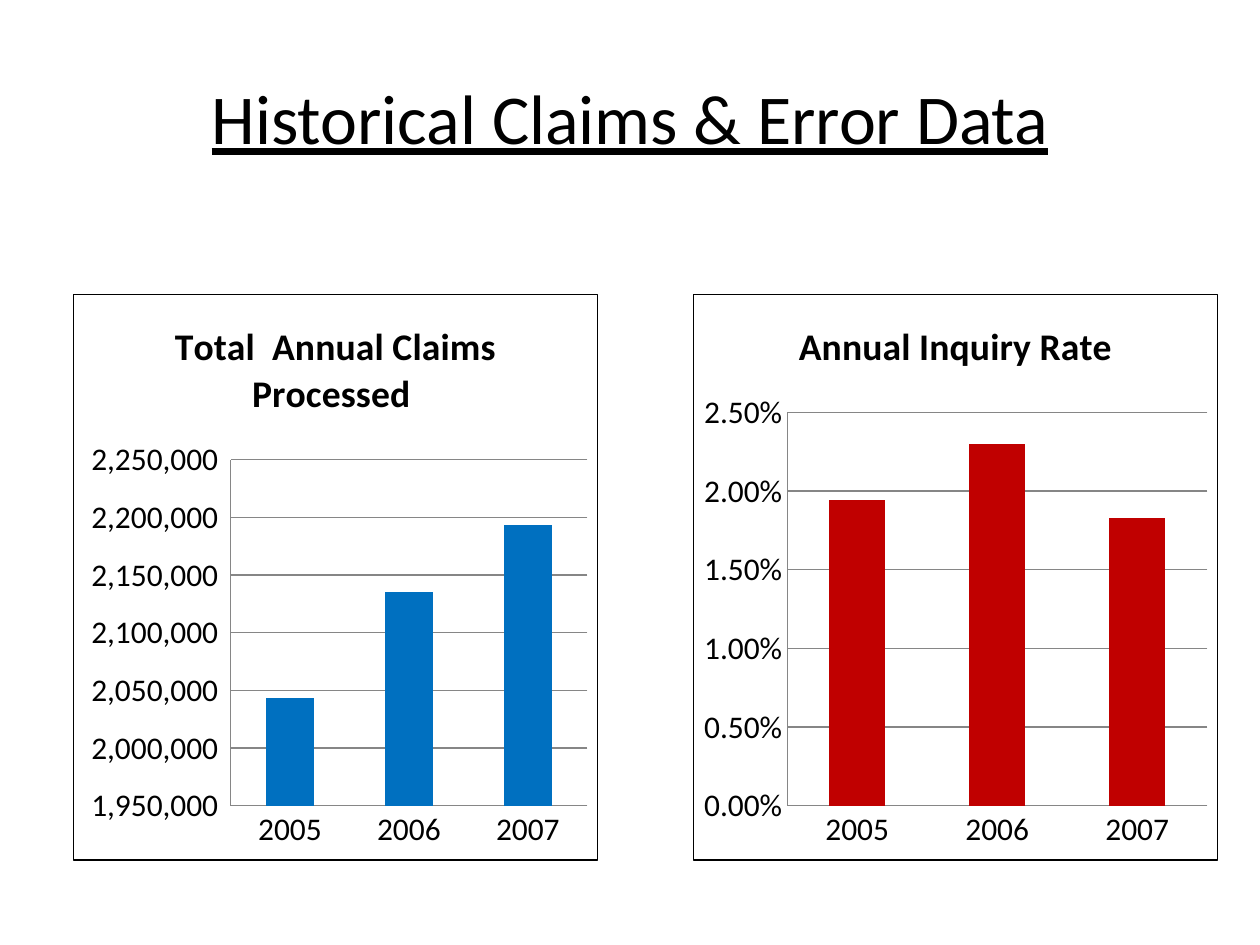
"""Build a slide comparing annual claims volume with the annual inquiry rate."""
from dataclasses import dataclass

from pptx import Presentation
from pptx.chart.data import CategoryChartData
from pptx.dml.color import RGBColor
from pptx.enum.chart import XL_CHART_TYPE, XL_TICK_MARK
from pptx.enum.text import MSO_ANCHOR, PP_ALIGN
from pptx.oxml import parse_xml
from pptx.oxml.ns import nsdecls, qn
from pptx.util import Inches, Pt


@dataclass(frozen=True)
class Theme:
    font: str = "Calibri"
    ink: str = "000000"
    grid: str = "868686"
    claims: str = "0070C0"
    inquiries: str = "C00000"
    heading_size: float = 40
    caption_size: float = 21.6
    label_size: float = 18
    line_width: float = 0.75


def style_font(font, theme, size, bold=False, underline=False):
    font.name = theme.font
    font.size = Pt(size)
    font.bold = bold
    font.underline = underline
    font.color.rgb = RGBColor.from_string(theme.ink)


def write(frame, text, theme, size, align=PP_ALIGN.CENTER, **look):
    paragraph = frame.paragraphs[0]
    paragraph.alignment = align
    run = paragraph.add_run()
    run.text = text
    style_font(run.font, theme, size, **look)


class SlideBuilder:
    def __init__(self, slide, theme):
        self.slide = slide
        self.theme = theme

    def heading(self, text, left, top, width, height):
        box = self.slide.shapes.add_textbox(
            Inches(left), Inches(top), Inches(width), Inches(height))
        frame = box.text_frame
        frame.word_wrap = True
        frame.vertical_anchor = MSO_ANCHOR.MIDDLE
        write(frame, text, self.theme, self.theme.heading_size, underline=True)

    def column_chart(self, caption, years, values, color, left, top, width,
                     height, scale, number_format):
        records = CategoryChartData(number_format=number_format)
        records.categories = years
        records.add_series("Series 1", values)
        chart = self.slide.shapes.add_chart(
            XL_CHART_TYPE.COLUMN_CLUSTERED, Inches(left), Inches(top),
            Inches(width), Inches(height), records).chart
        style_font(chart.font, self.theme, self.theme.label_size)
        chart.has_legend = False
        chart.has_title = True
        write(chart.chart_title.text_frame, caption, self.theme,
              self.theme.caption_size, bold=True)
        chart.chart_title.include_in_layout = False

        columns = chart.plots[0]
        columns.gap_width = 150
        columns.vary_by_categories = False
        fill = columns.series[0].format.fill
        fill.solid()
        fill.fore_color.rgb = RGBColor.from_string(color)

        amounts = chart.value_axis
        amounts.minimum_scale, amounts.maximum_scale, amounts.major_unit = scale
        amounts.has_major_gridlines = True
        amounts.tick_labels.number_format = number_format
        amounts.tick_labels.number_format_is_linked = False
        for axis in (chart.category_axis, amounts):
            axis.major_tick_mark = axis.minor_tick_mark = XL_TICK_MARK.NONE
        for part in (chart.category_axis, amounts, amounts.major_gridlines):
            part.format.line.width = Pt(self.theme.line_width)
            part.format.line.color.rgb = RGBColor.from_string(self.theme.grid)
        self.border(chart)

    def border(self, chart):
        outline = parse_xml(
            f'<c:spPr {nsdecls("c", "a")}><a:noFill/>'
            f'<a:ln w="{Pt(self.theme.line_width)}"><a:solidFill>'
            f'<a:srgbClr val="{self.theme.ink}"/></a:solidFill></a:ln></c:spPr>')
        chart.element.find(qn("c:chart")).addnext(outline)


def main():
    deck = Presentation()
    deck.slide_width, deck.slide_height = Inches(10), Inches(7.5)
    theme = Theme()
    builder = SlideBuilder(deck.slides.add_slide(deck.slide_layouts[6]), theme)
    builder.heading("Historical Claims & Error Data", 0.5, 0.3, 9, 1.25)

    years = ["2005", "2006", "2007"]
    panel = dict(top=2.33, width=4.17, height=4.5)
    builder.column_chart(
        "Annual Inquiry Rate", years, [0.0194, 0.023, 0.0183], theme.inquiries,
        left=5.5, scale=(0, 0.025, 0.005), number_format="0.00%", **panel)
    builder.column_chart(
        "Total  Annual Claims Processed ", years, [2043000, 2135000, 2193000],
        theme.claims, left=0.58, scale=(1950000, 2250000, 50000),
        number_format='_(* #,##0_);_(* \\(#,##0\\);_(* "-"_);_(@_)', **panel)
    deck.save("out.pptx")


if __name__ == "__main__":
    main()
